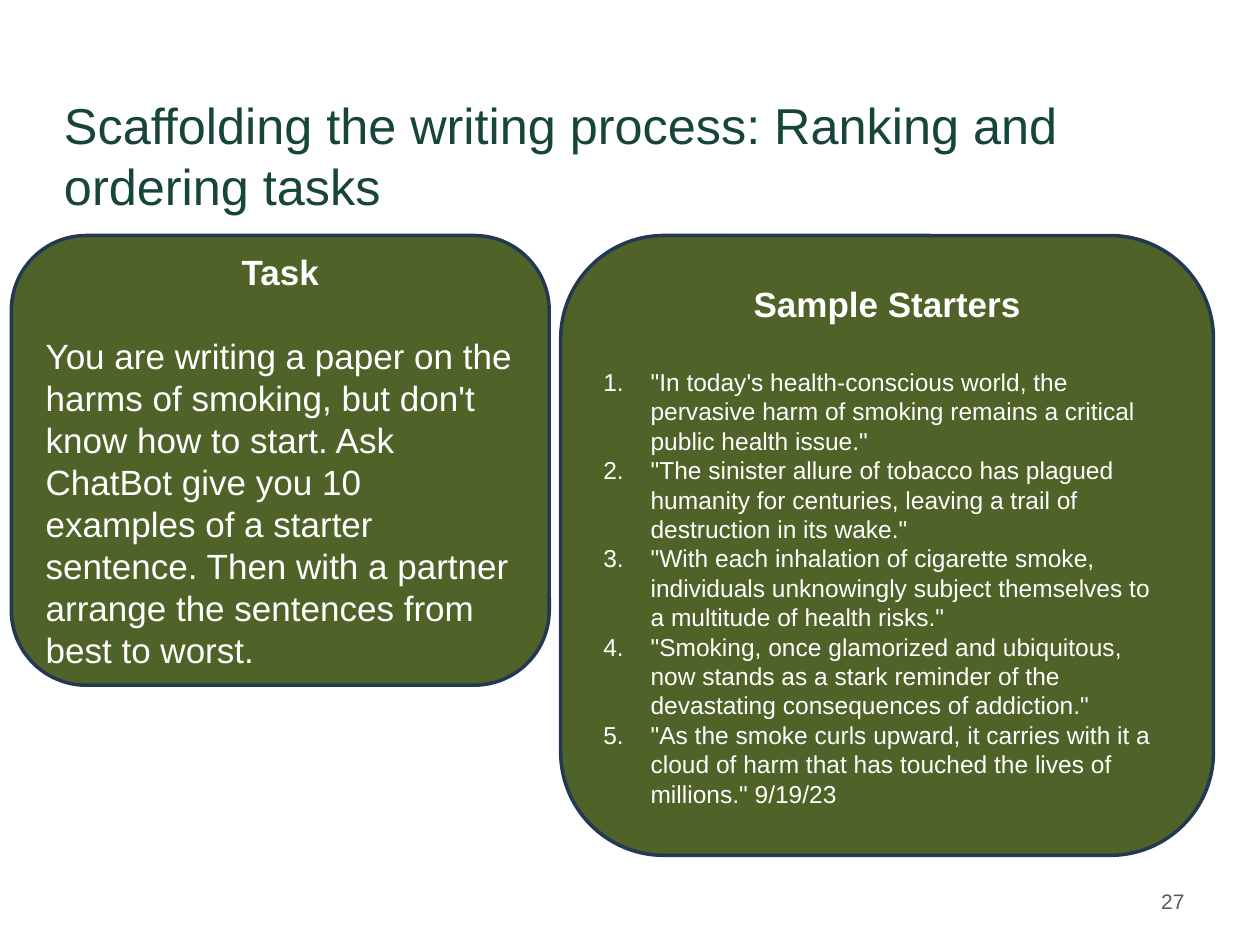
from lxml.etree import SubElement
from pptx import Presentation
from pptx.dml.color import RGBColor
from pptx.enum.shapes import MSO_SHAPE
from pptx.enum.text import MSO_ANCHOR, PP_ALIGN
from pptx.oxml.ns import qn
from pptx.util import Pt


def color(hex_code):
    return RGBColor.from_string(hex_code)


class SlideStyle:
    font = "Arial"
    title_color = "18453B"
    number_color = "595959"
    panel_fill = "4F6228"
    panel_line = "233953"
    panel_text = "FFFFFF"
    heading_size = 20
    heading_gap = 24
    list_indent = 27

    def __init__(self, slide):
        self.slide = slide

    def add_text(self, paragraph, text, size, hex_code, bold=False, align=PP_ALIGN.LEFT):
        paragraph.alignment = align
        run = paragraph.add_run()
        run.text = text
        run.font.name = self.font
        run.font.size = Pt(size)
        run.font.bold = bold
        run.font.color.rgb = color(hex_code)

    def label(self, box, text, size, hex_code, align=PP_ALIGN.LEFT, anchor=MSO_ANCHOR.TOP):
        frame = self.slide.shapes.add_textbox(*map(Pt, box)).text_frame
        frame.word_wrap = True
        frame.vertical_anchor = anchor
        self.add_text(frame.paragraphs[0], text, size, hex_code, align=align)

    def number(self, paragraph):
        properties = paragraph._p.get_or_add_pPr()
        properties.set("marL", str(Pt(self.list_indent)))
        properties.set("indent", str(-Pt(self.list_indent)))
        bullet_color = SubElement(properties, qn("a:buClr"))
        SubElement(bullet_color, qn("a:srgbClr"), val=self.panel_text)
        SubElement(properties, qn("a:buFont"), typeface=self.font)
        SubElement(properties, qn("a:buAutoNum"), type="arabicPeriod")

    def panel(self, box, heading, body, size, numbered=False):
        shape = self.slide.shapes.add_shape(MSO_SHAPE.ROUNDED_RECTANGLE, *map(Pt, box))
        shape.shadow.inherit = False
        shape.fill.solid()
        shape.fill.fore_color.rgb = color(self.panel_fill)
        shape.line.color.rgb = color(self.panel_line)
        shape.line.width = Pt(2)
        frame = shape.text_frame
        frame.word_wrap = True
        frame.vertical_anchor = MSO_ANCHOR.MIDDLE
        title = frame.paragraphs[0]
        title.space_after = Pt(self.heading_gap)
        self.add_text(title, heading, self.heading_size, self.panel_text, True, PP_ALIGN.CENTER)
        for text in body:
            paragraph = frame.add_paragraph()
            if numbered:
                self.number(paragraph)
            self.add_text(paragraph, text, size, self.panel_text)


TASK = [
    "You are writing a paper on the harms of smoking, but don't know how to start. "
    "Ask ChatBot give you 10 examples of a starter sentence. "
    "Then with a partner arrange the sentences from best to worst."
]
STARTERS = [
    "\"In today's health-conscious world, the pervasive harm of smoking remains "
    "a critical public health issue.\"",
    '"The sinister allure of tobacco has plagued humanity for centuries, '
    'leaving a trail of destruction in its wake."',
    '"With each inhalation of cigarette smoke, individuals unknowingly subject '
    'themselves to a multitude of health risks."',
    '"Smoking, once glamorized and ubiquitous, now stands as a stark reminder '
    'of the devastating consequences of addiction."',
    '"As the smoke curls upward, it carries with it a cloud of harm '
    'that has touched the lives of millions." 9/19/23',
]


def main():
    deck = Presentation()
    deck.slide_width, deck.slide_height = Pt(720), Pt(540)
    style = SlideStyle(deck.slides.add_slide(deck.slide_layouts[6]))

    # Title and slide number
    style.label((29.5, 50.4, 648, 64.8),
                "Scaffolding the writing process: Ranking and ordering tasks",
                28.8, style.title_color)
    style.label((516.2, 500.4, 167.8, 28.8), "27", 12, style.number_color,
                PP_ALIGN.RIGHT, MSO_ANCHOR.MIDDLE)

    # Task and sample starters, side by side
    panel_top = 134.6
    style.panel((6.5, panel_top, 307.4, 257), "Task", TASK, 20)
    style.panel((320.4, panel_top, 373, 354.2), "Sample Starters", STARTERS, 14, numbered=True)

    deck.save("out.pptx")


if __name__ == "__main__":
    main()
